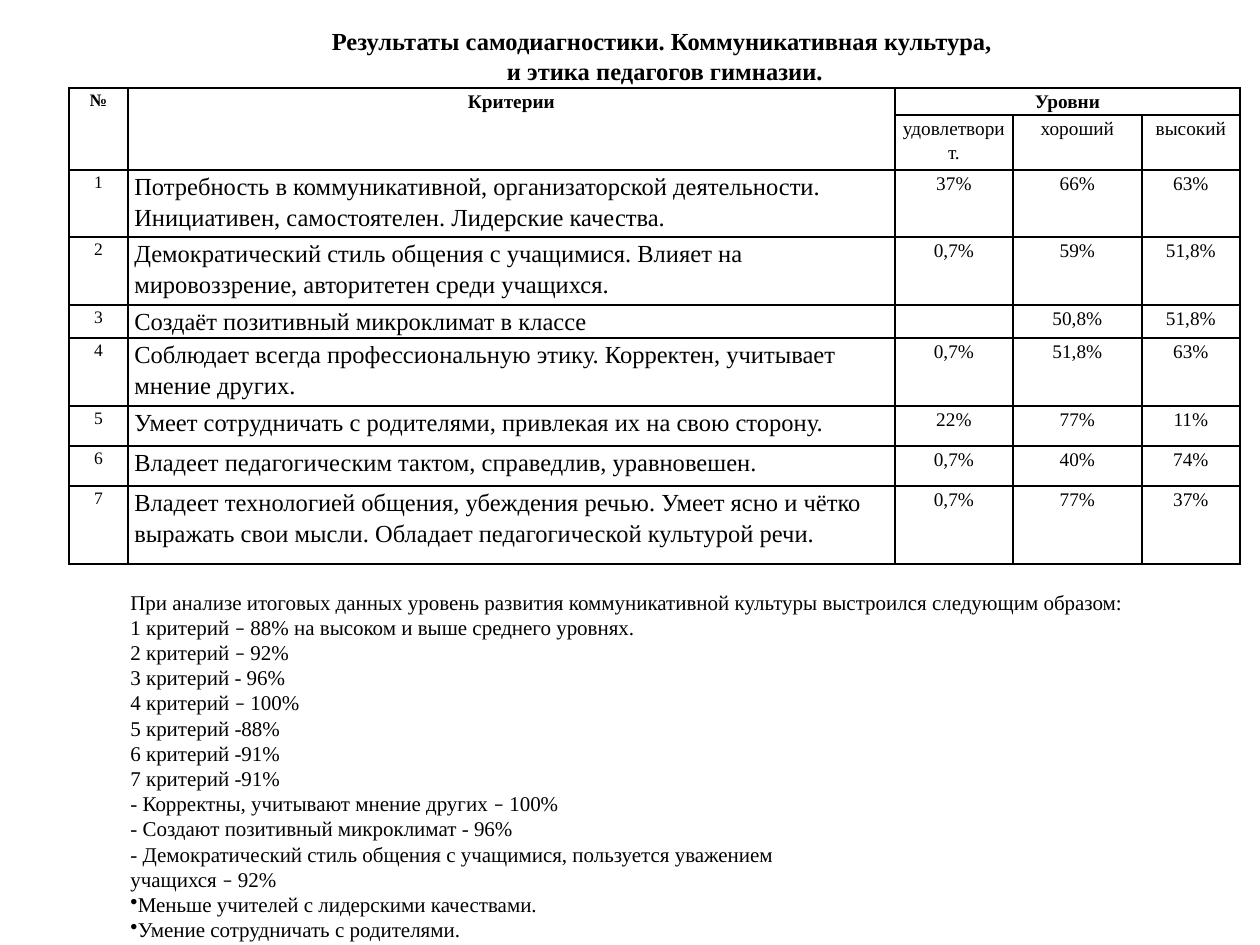
import lxml.etree
import pptx
import pptx.dml.color
import pptx.enum.text
import pptx.oxml.ns
import pptx.util

EMU_PER_PX = 914400 / 126
INK = "000000"
PAPER = "FFFFFF"
CENTER = pptx.enum.text.PP_ALIGN.CENTER
JUSTIFY = pptx.enum.text.PP_ALIGN.JUSTIFY
LEFT = pptx.enum.text.PP_ALIGN.LEFT


def px(length):
    return pptx.util.Emu(round(length * EMU_PER_PX))


def write(frame, text, size=12, bold=False, align=LEFT, spacing=None):
    """Write one paragraph per line; a leading • becomes a bullet, – is set in Calibri."""
    frame.word_wrap = True
    for number, line in enumerate(text.split("\n")):
        paragraph = frame.paragraphs[0] if number == 0 else frame.add_paragraph()
        paragraph.alignment = align
        if spacing:
            paragraph.line_spacing = spacing
        if line.startswith("•"):
            bullet = lxml.etree.SubElement(
                paragraph._p.get_or_add_pPr(), pptx.oxml.ns.qn("a:buChar"))
            bullet.set("char", "•")
            line = line[1:]
        before, dash, after = line.partition("–")
        for part in filter(None, (before, dash, after)):
            run = paragraph.add_run()
            run.text = part
            run.font.name = "Calibri" if part == "–" else "Times New Roman"
            run.font.size = pptx.util.Pt(size)
            run.font.bold = bold
            run.font.color.rgb = pptx.dml.color.RGBColor.from_string(INK)
        if not line:
            end = lxml.etree.SubElement(paragraph._p, pptx.oxml.ns.qn("a:endParaRPr"))
            end.set("sz", str(size * 100))


deck = pptx.Presentation()
deck.slide_width, deck.slide_height = px(1260), px(945)
slide = deck.slides.add_slide(deck.slide_layouts[6])

# Table of criteria and levels
column_widths = [59, 767, 118, 129, 98]
row_heights = [27, 55, 67, 68, 33, 68, 40, 40, 78]
header = [
    ["№", "Критерии", "Уровни", "", ""],
    ["", "", "удовлетворит.", "хороший", "высокий"],
]
criteria = [
    ["Потребность в коммуникативной, организаторской деятельности. "
     "Инициативен, самостоятелен. Лидерские качества.", "37%", "66%", "63%"],
    ["Демократический стиль общения с учащимися. Влияет на мировоззрение, "
     "авторитетен среди учащихся.", "0,7%", "59%", "51,8%"],
    ["Создаёт позитивный микроклимат в классе", "", "50,8%", "51,8%"],
    ["Соблюдает всегда профессиональную этику. Корректен, учитывает мнение других.",
     "0,7%", "51,8%", "63%"],
    ["Умеет сотрудничать с родителями, привлекая их на свою сторону.",
     "22%", "77%", "11%"],
    ["Владеет педагогическим тактом, справедлив, уравновешен.",
     "0,7%", "40%", "74%"],
    ["Владеет технологией общения, убеждения речью. Умеет ясно и чётко выражать "
     "свои мысли. Обладает педагогической культурой речи.", "0,7%", "77%", "37%"],
]
rows = header + [[str(number), *row] for number, row in enumerate(criteria, 1)]

levels = slide.shapes.add_table(
    len(rows), len(column_widths), px(69), px(88),
    px(sum(column_widths)), px(sum(row_heights))).table
levels.first_row = levels.horz_banding = False
for column, width in zip(levels.columns, column_widths):
    column.width = px(width)
for row, height in zip(levels.rows, row_heights):
    row.height = px(height)

for r, row in enumerate(rows):
    for c, text in enumerate(row):
        cell = levels.cell(r, c)
        cell.margin_left = cell.margin_right = pptx.util.Inches(0.05)
        cell.margin_top = cell.margin_bottom = 0
        is_criterion = r >= len(header) and c == 1
        write(cell.text_frame, text,
              size=10 if c == 0 else 14 if is_criterion else 11,
              bold=r == 0, align=LEFT if is_criterion else CENTER, spacing=1.15)
        cell.fill.solid()
        cell.fill.fore_color.rgb = pptx.dml.color.RGBColor.from_string(PAPER)
        properties = cell._tc.get_or_add_tcPr()
        for place, side in enumerate(("lnL", "lnR", "lnT", "lnB")):
            border = lxml.etree.Element(pptx.oxml.ns.qn("a:" + side), w="12700")
            fill = lxml.etree.SubElement(border, pptx.oxml.ns.qn("a:solidFill"))
            lxml.etree.SubElement(fill, pptx.oxml.ns.qn("a:srgbClr"), val=INK)
            properties.insert(place, border)

for first, last in (((0, 0), (1, 0)), ((0, 1), (1, 1)), ((0, 2), (0, 4))):
    levels.cell(*first).merge(levels.cell(*last))

# Conclusions
conclusions = slide.shapes.add_textbox(px(118), px(581), px(1023), px(369)).text_frame
conclusions.vertical_anchor = pptx.enum.text.MSO_ANCHOR.MIDDLE
write(conclusions, """\
При анализе итоговых данных уровень развития коммуникативной культуры выстроился следующим образом:
1 критерий – 88% на высоком и выше среднего уровнях.
2 критерий – 92%
3 критерий - 96%
4 критерий – 100%
5 критерий -88%
6 критерий -91%
7 критерий -91%
- Корректны, учитывают мнение других – 100%
- Создают позитивный микроклимат - 96%
- Демократический стиль общения с учащимися, пользуется уважением
учащихся – 92%
•Меньше учителей с лидерскими качествами.
•Умение сотрудничать с родителями.""", align=JUSTIFY)

# Title
title = slide.shapes.add_textbox(px(207), px(20), px(916), px(72)).text_frame
write(title, "Результаты самодиагностики. Коммуникативная культура, \n"
      "и этика педагогов гимназии.", size=14, bold=True, align=CENTER)

deck.save("out.pptx")
